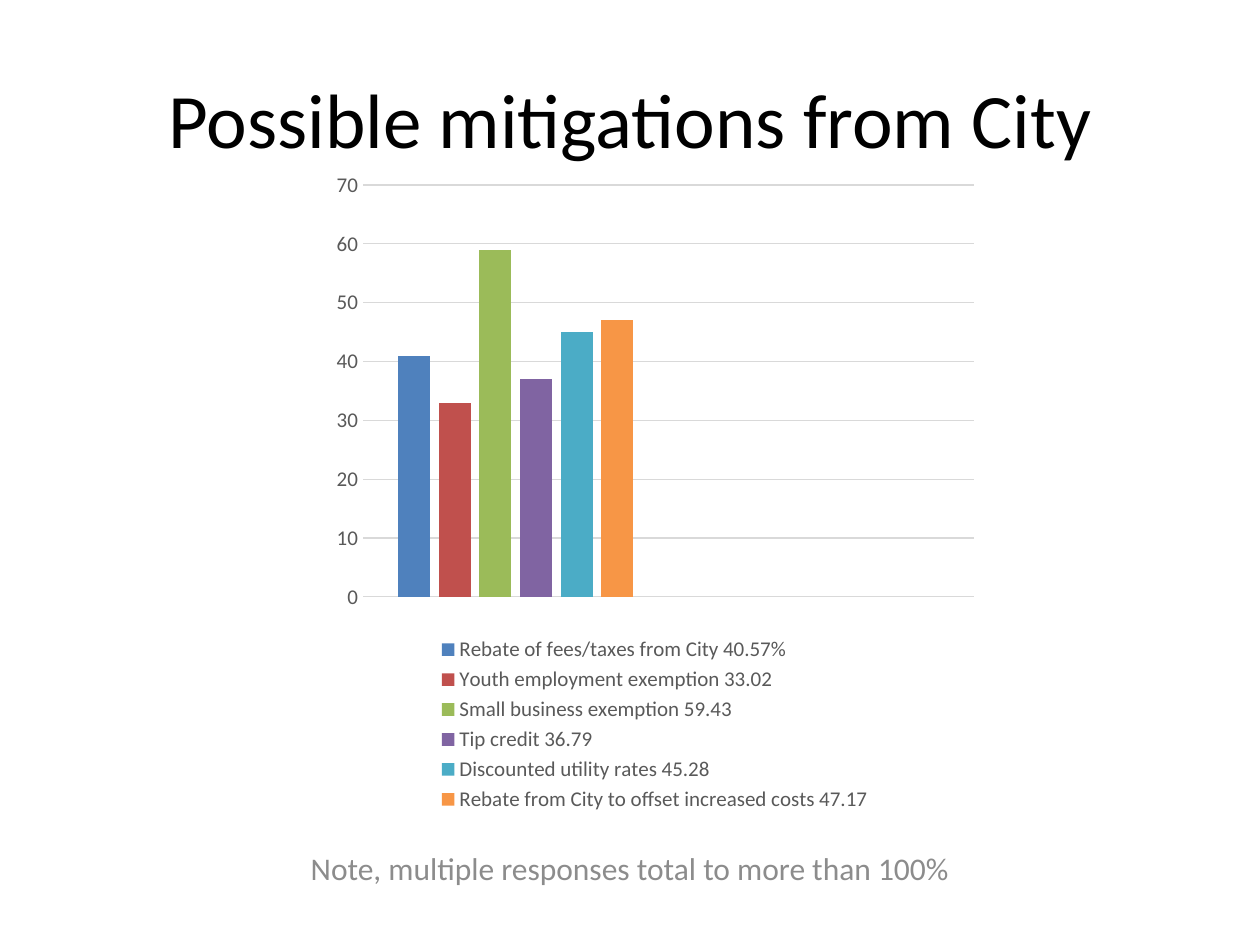
from lxml import etree
from pptx import Presentation
from pptx.chart.data import CategoryChartData
from pptx.dml.color import RGBColor
from pptx.enum.chart import XL_CHART_TYPE as CT, XL_LEGEND_POSITION as LP, XL_TICK_MARK as TM
from pptx.enum.text import MSO_ANCHOR, PP_ALIGN
from pptx.oxml.ns import qn
from pptx.util import Emu, Pt

PX = 914400 / 126
FONT = "Calibri"
BLACK = RGBColor(0x00, 0x00, 0x00)
AXIS_GRAY = RGBColor(0x59, 0x59, 0x59)
GRID_GRAY = RGBColor(0xD9, 0xD9, 0xD9)
NOTE_GRAY = RGBColor(0x8C, 0x8C, 0x8C)
CHART_W, CHART_H = 664, 658
MITIGATIONS = [
    ("Rebate of fees/taxes from City 40.57%", 41, RGBColor(0x4F, 0x81, 0xBD)),
    ("Youth employment exemption 33.02", 33, RGBColor(0xC0, 0x50, 0x4D)),
    ("Small business exemption 59.43", 59, RGBColor(0x9B, 0xBB, 0x59)),
    ("Tip credit 36.79", 37, RGBColor(0x80, 0x64, 0xA2)),
    ("Discounted utility rates 45.28", 45, RGBColor(0x4B, 0xAC, 0xC6)),
    ("Rebate from City to offset increased costs 47.17", 47, RGBColor(0xF7, 0x96, 0x46)),
]


def px(*lengths):
    """Turn pixel lengths into EMU."""
    return [Emu(round(n * PX)) for n in lengths]


def add_text(s, box, text, size, color, anchor):
    tf = s.shapes.add_textbox(*px(*box)).text_frame
    tf.word_wrap = True
    tf.vertical_anchor = anchor
    p = tf.paragraphs[0]
    p.text = text
    p.alignment = PP_ALIGN.CENTER
    font = p.runs[0].font
    font.name, font.size, font.color.rgb = FONT, Pt(size), color
    return p


prs = Presentation()
prs.slide_width, prs.slide_height = px(1260, 945)
s = prs.slides.add_slide(prs.slide_layouts[6])

add_text(s, (95, 16, 1071, 203), "Possible mitigations from City", 44, BLACK, MSO_ANCHOR.MIDDLE)

# The second category is empty, so the bars fill the left half
data = CategoryChartData()
data.categories = ["1", ""]
for name, value, _ in MITIGATIONS:
    data.add_series(name, [value, None])
chart = s.shapes.add_chart(CT.COLUMN_CLUSTERED, *px(323, 159, CHART_W, CHART_H), data).chart
chart.has_title = False
chart.font.name, chart.font.size, chart.font.color.rgb = FONT, Pt(10), BLACK

plot = chart.plots[0]
plot.gap_width, plot.overlap = 219, -27
plot.vary_by_categories = False
for series, (_, _, color) in zip(plot.series, MITIGATIONS):
    series.format.fill.solid()
    series.format.fill.fore_color.rgb = color

chart.category_axis.visible = False
axis = chart.value_axis
axis.minimum_scale, axis.maximum_scale, axis.major_unit = 0, 70, 10
axis.major_tick_mark = axis.minor_tick_mark = TM.NONE
axis.tick_labels.number_format = "General"
axis.tick_labels.number_format_is_linked = False
axis.format.line.fill.background()
grid = axis.major_gridlines.format.line
grid.width, grid.color.rgb = Pt(0.75), GRID_GRAY

chart.has_legend = True
chart.legend.position = LP.BOTTOM
chart.legend.include_in_layout = False
for font in (axis.tick_labels.font, chart.legend.font):
    font.name, font.size, font.color.rgb = FONT, Pt(12), AXIS_GRAY

# Fixed inner plot area, as fractions of the chart
plot_area = chart.element.find(".//" + qn("c:plotArea"))
layout = plot_area.find(qn("c:layout"))
if layout is None:
    layout = etree.Element(qn("c:layout"))
    plot_area.insert(0, layout)
manual = etree.SubElement(layout, qn("c:manualLayout"))
for tag, value in (("layoutTarget", "inner"), ("xMode", "edge"), ("yMode", "edge"),
                   ("x", 40 / CHART_W), ("y", 26 / CHART_H),
                   ("w", 611 / CHART_W), ("h", 412 / CHART_H)):
    etree.SubElement(manual, qn("c:" + tag)).set("val", str(value))

note = add_text(s, (63, 843, 1134, 68), "Note, multiple responses total to more than 100%",
                18, NOTE_GRAY, MSO_ANCHOR.TOP)
note.space_before = Pt(3.6)

prs.save("out.pptx")
